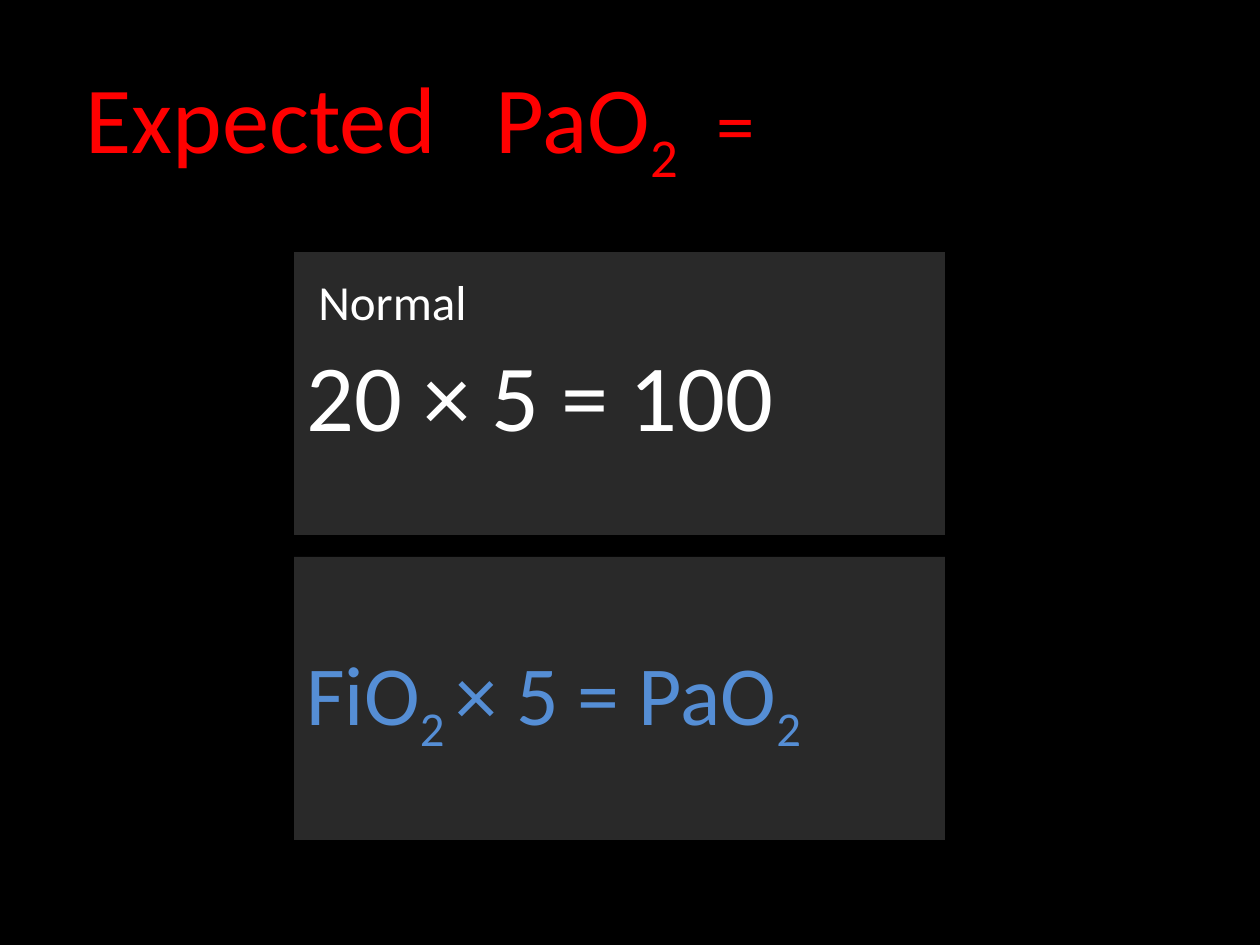
import pptx
import pptx.dml.color
import pptx.enum.shapes
import pptx.enum.text
import pptx.oxml
import pptx.oxml.ns
import pptx.util

RGBColor = pptx.dml.color.RGBColor
BLACK = RGBColor(0x00, 0x00, 0x00)
PANEL_GREY = RGBColor(0x29, 0x29, 0x29)
WHITE = RGBColor(0xFF, 0xFF, 0xFF)
RED = RGBColor(0xFF, 0x00, 0x00)
BLUE = RGBColor(0x55, 0x8E, 0xD5)

FONT = "Calibri"
PX = 914400 // 126
SUBSCRIPT = "-25000"

# Each run: text, size in points, whether it is a subscript
HEADING = [("Expected\tPaO", 54, False), ("2", 54, True), ("\t=", 44, False)]
HEADING_TABS = (410, 631)
NORMAL_LABEL = [("Normal", 28, False)]
EQUATIONS = [
    ([("20 × 5 = 100", 54, False)], WHITE),
    ([("FiO", 48, False), ("2 ", 48, True),
      ("× 5 = PaO", 48, False), ("2", 48, True)], BLUE),
]

PANEL_LEFT, PANEL_TOP = 294, 252
PANEL_WIDTH, PANEL_HEIGHT = 651, 283
PANEL_STEP = 305


def box(left, top, width, height):
    return [pptx.util.Emu(value * PX) for value in (left, top, width, height)]


def write(shape, runs, color, anchor):
    frame = shape.text_frame
    frame.word_wrap = True
    frame.auto_size = pptx.enum.text.MSO_AUTO_SIZE.NONE
    frame.vertical_anchor = anchor
    paragraph = frame.paragraphs[0]
    paragraph.alignment = pptx.enum.text.PP_ALIGN.LEFT
    for text, size, subscript in runs:
        run = paragraph.add_run()
        run.text = text
        run.font.name = FONT
        run.font.size = pptx.util.Pt(size)
        run.font.color.rgb = color
        if subscript:
            run._r.get_or_add_rPr().set("baseline", SUBSCRIPT)


def set_tabs(paragraph, positions):
    stops = "".join(f'<a:tab pos="{x * PX}" algn="l"/>' for x in positions)
    namespace = pptx.oxml.ns.nsdecls("a")
    paragraph._p.get_or_add_pPr().append(
        pptx.oxml.parse_xml(f"<a:tabLst {namespace}>{stops}</a:tabLst>"))


def main():
    deck = pptx.Presentation()
    deck.slide_width = pptx.util.Inches(10)
    deck.slide_height = pptx.util.Inches(7.5)
    slide = deck.slides.add_slide(deck.slide_layouts[5])
    slide.background.fill.solid()
    slide.background.fill.fore_color.rgb = BLACK
    top = pptx.enum.text.MSO_ANCHOR.TOP
    middle = pptx.enum.text.MSO_ANCHOR.MIDDLE

    heading = slide.shapes.title
    heading.left, heading.top, heading.width, heading.height = box(73, 53, 832, 126)
    write(heading, HEADING, RED, top)
    set_tabs(heading.text_frame.paragraphs[0], HEADING_TABS)

    for index, (equation, color) in enumerate(EQUATIONS):
        panel = slide.shapes.add_shape(
            pptx.enum.shapes.MSO_SHAPE.RECTANGLE,
            *box(PANEL_LEFT, PANEL_TOP + index * PANEL_STEP, PANEL_WIDTH, PANEL_HEIGHT))
        panel.shadow.inherit = False
        panel.fill.solid()
        panel.fill.fore_color.rgb = PANEL_GREY
        panel.line.fill.background()
        write(panel, equation, color, middle)

    label = slide.shapes.add_textbox(*box(306, 265, 186, 72))
    write(label, NORMAL_LABEL, WHITE, top)
    deck.save("out.pptx")


if __name__ == "__main__":
    main()
